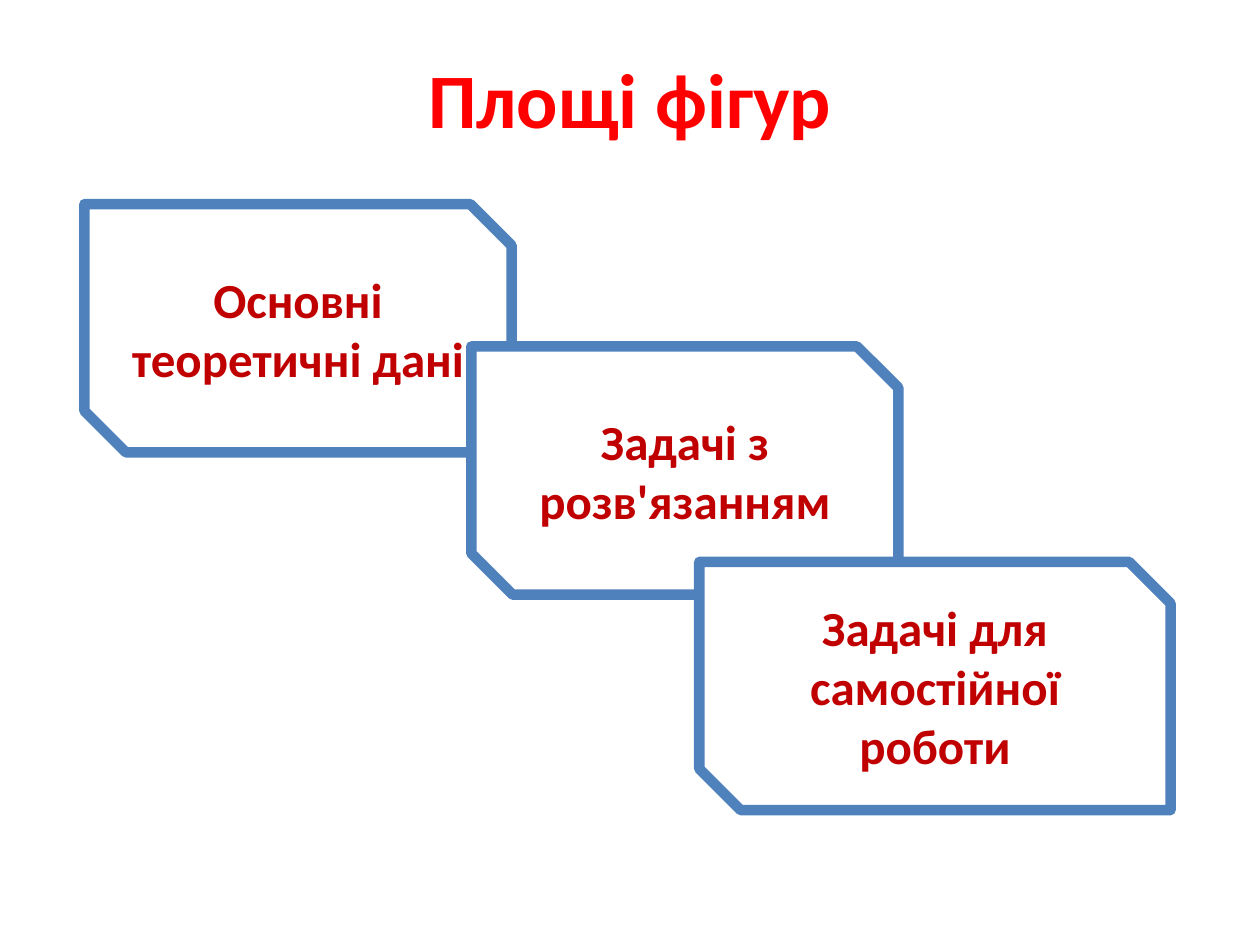
from pptx import Presentation
from pptx.dml.color import RGBColor
from pptx.enum.shapes import MSO_SHAPE as Shape
from pptx.enum.text import MSO_ANCHOR as Anchor, PP_ALIGN as Align
from pptx.util import Inches, Pt

TITLE = ("Площі фігур", (0.5, 0.3, 9, 0.95))
TOPICS = [
    ("Основні теоретичні дані", (0.67, 1.62, 3.39)),
    ("Задачі з розв'язанням", (3.74, 2.75, 3.39)),
    ("Задачі для самостійної роботи", (5.55, 4.46, 3.74)),
]
TOPIC_HEIGHT = 1.97

THEME = {
    "title": {"name": "Calibri", "size": Pt(44), "bold": True, "color": "FF0000"},
    "topic": {"name": "Calibri", "size": Pt(28), "bold": True, "color": "C00000"},
    "fill": "FFFFFF",
    "line": "4F81BD",
    "line_width": Pt(6),
}


def write_text(holder, text, style):
    frame = holder.text_frame
    frame.word_wrap = True
    frame.vertical_anchor = Anchor.MIDDLE
    paragraph = frame.paragraphs[0]
    paragraph.alignment = Align.CENTER
    run = paragraph.add_run()
    run.text = text
    for attribute, value in THEME[style].items():
        if attribute == "color":
            run.font.color.rgb = RGBColor.from_string(value)
        else:
            setattr(run.font, attribute, value)


def add_topic(slide, text, left, top, width):
    card = slide.shapes.add_shape(
        Shape.SNIP_2_DIAG_RECTANGLE,
        *map(Inches, (left, top, width, TOPIC_HEIGHT)),
    )
    card.shadow.inherit = False
    card.fill.solid()
    card.fill.fore_color.rgb = RGBColor.from_string(THEME["fill"])
    card.line.color.rgb = RGBColor.from_string(THEME["line"])
    card.line.width = THEME["line_width"]
    write_text(card, text, "topic")


def main():
    deck = Presentation()
    deck.slide_width, deck.slide_height = Inches(10), Inches(7.5)
    slide = deck.slides.add_slide(deck.slide_layouts[6])

    title, title_box = TITLE
    write_text(slide.shapes.add_textbox(*map(Inches, title_box)), title, "title")
    for topic, place in TOPICS:
        add_topic(slide, topic, *place)

    deck.save("out.pptx")


if __name__ == "__main__":
    main()
